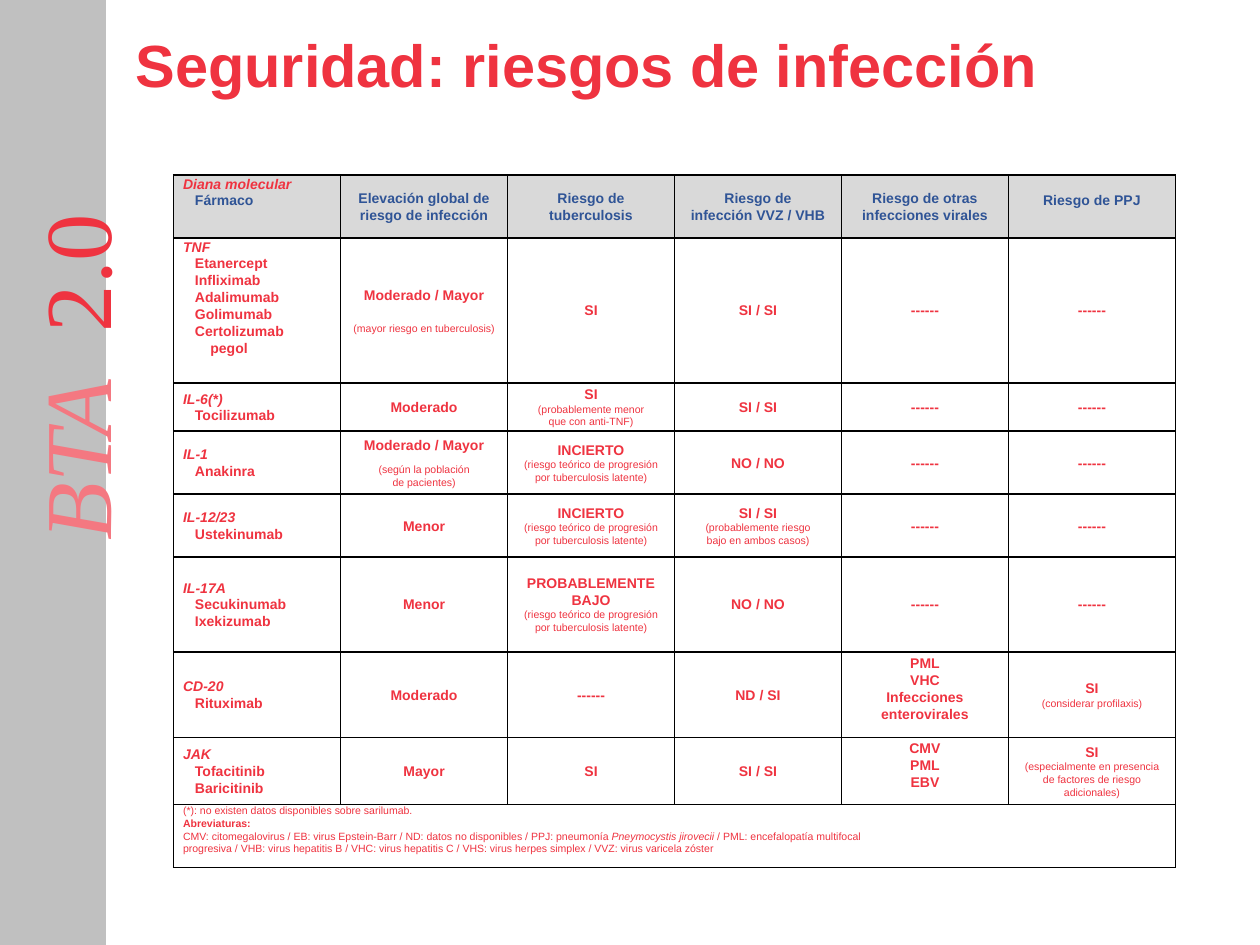
import pptx
import pptx.dml.color
import pptx.enum.shapes
import pptx.enum.text
import pptx.oxml
import pptx.oxml.ns
import pptx.util
from pptx.util import Cm

COLORS = {
    "red": "EF3340",
    "pink": "F47881",
    "blue": "2F5496",
    "sidebar": "C0C0C0",
    "header": "D9D9D9",
    "border": "000000",
}
ALIGN = pptx.enum.text.PP_ALIGN
ANCHOR = pptx.enum.text.MSO_ANCHOR
ROW_HEIGHTS = [1.27, 2.92, 0.97, 1.27, 1.27, 1.91, 1.73, 1.35, 1.27]
TAIL_MARGIN = 0.26
NONE = "------"
PROGRESSION = "(riesgo teórico de progresión\npor tuberculosis latente)"

HEADERS = [
    "Elevación global de\nriesgo de infección",
    "Riesgo de tuberculosis",
    "Riesgo de\ninfección VVZ / VHB",
    "Riesgo de otras\ninfecciones virales",
    "Riesgo de PPJ",
]
TARGETS = [
    ("TNF", ["Etanercept", "Infliximab", "Adalimumab", "Golimumab", "Certolizumab", "pegol"]),
    ("IL-6(*)", ["Tocilizumab"]),
    ("IL-1", ["Anakinra"]),
    ("IL-12/23", ["Ustekinumab"]),
    ("IL-17A", ["Secukinumab", "Ixekizumab"]),
    ("CD-20", ["Rituximab"]),
    ("JAK", ["Tofacitinib", "Baricitinib"]),
]
RISKS = [
    [("Moderado / Mayor", "(mayor riesgo en tuberculosis)", 11), ("SI",), ("SI / SI",), (NONE,), (NONE,)],
    [("Moderado",), ("SI", "(probablemente menor\nque con anti-TNF)"), ("SI / SI",), (NONE,), (NONE,)],
    [("Moderado / Mayor", "(según la población\nde pacientes)", 6), ("INCIERTO", PROGRESSION),
     ("NO / NO",), (NONE,), (NONE,)],
    [("Menor",), ("INCIERTO", PROGRESSION),
     ("SI / SI", "(probablemente riesgo\nbajo en ambos casos)"), (NONE,), (NONE,)],
    [("Menor",), ("PROBABLEMENTE BAJO", PROGRESSION), ("NO / NO",), (NONE,), (NONE,)],
    [("Moderado",), (NONE,), ("ND / SI",), ("PML\nVHC\nInfecciones\nenterovirales",),
     ("SI", "(considerar profilaxis)")],
    [("Mayor",), ("SI",), ("SI / SI",), ("CMV\nPML\nEBV",),
     ("SI", "(especialmente en presencia de factores de riesgo adicionales)")],
]
FOOTNOTES = [
    [("(*): no existen datos disponibles sobre sarilumab.", {})],
    [("Abreviaturas:", {"bold": True})],
    [("CMV: citomegalovirus / EB: virus Epstein-Barr / ND: datos no disponibles / PPJ: pneumonía ", {}),
     ("Pneymocystis jirovecii", {"italic": True}),
     (" / PML: encefalopatía multifocal", {})],
    [("progresiva / VHB: virus hepatitis B / VHC: virus hepatitis C / "
      "VHS: virus herpes simplex / VVZ: virus varicela zóster", {})],
]


def rgb(name):
    return pptx.dml.color.RGBColor.from_string(COLORS[name])


def format_run(run, size, color="red", bold=False, italic=False, name="Arial"):
    font = run.font
    font.size = pptx.util.Pt(size)
    font.name = name
    font.bold = bold
    font.italic = italic
    font.color.rgb = rgb(color)


def write_lines(cell, lines):
    frame = cell.text_frame
    frame.text = "\n".join(line["text"] for line in lines)
    for paragraph, line in zip(frame.paragraphs, lines):
        paragraph.alignment = line.get("align", ALIGN.CENTER)
        paragraph.line_spacing = 1.07
        if "gap" in line:
            paragraph.space_after = pptx.util.Pt(line["gap"])
        if "indent" in line:
            paragraph._p.get_or_add_pPr().set("marL", str(Cm(line["indent"])))
        format_run(paragraph.runs[0], line.get("size", 8), line.get("color", "red"),
                   line.get("bold", True), line.get("italic", False))


def style_cell(cell, fill=None, anchor=ANCHOR.MIDDLE):
    cell.margin_left = cell.margin_right = Cm(0.19)
    cell.margin_top = cell.margin_bottom = 0
    cell.vertical_anchor = anchor
    properties = cell._tc.get_or_add_tcPr()
    for side in ("lnL", "lnR", "lnT", "lnB"):
        properties.append(pptx.oxml.parse_xml(
            f'<a:{side} {pptx.oxml.ns.nsdecls("a")} w="{pptx.util.Pt(1)}"><a:solidFill>'
            f'<a:srgbClr val="{COLORS["border"]}"/></a:solidFill></a:{side}>'))
    if fill:
        cell.fill.solid()
        cell.fill.fore_color.rgb = rgb(fill)
    else:
        cell.fill.background()


def write_header(table):
    write_lines(table.cell(0, 0), [
        {"text": "Diana molecular", "align": ALIGN.JUSTIFY, "italic": True},
        {"text": "Fármaco", "align": ALIGN.JUSTIFY, "indent": 0.24, "color": "blue"},
    ])
    for column, header in enumerate(HEADERS, 1):
        write_lines(table.cell(0, column),
                    [{"text": text, "color": "blue"} for text in header.split("\n")])
    table.cell(0, 5).margin_bottom = Cm(TAIL_MARGIN)


def write_target(cell, target, drugs):
    lines = [{"text": target, "align": ALIGN.LEFT, "italic": True}]
    for drug in drugs:
        indent = 0.55 if drug == "pegol" else 0.24
        lines.append({"text": drug, "align": ALIGN.LEFT, "indent": indent})
    write_lines(cell, lines)


def write_risk(cell, level, note="", gap=0):
    lines = [{"text": text} for text in level.split("\n")]
    if len(lines) > 1:
        cell.margin_bottom = Cm(TAIL_MARGIN)
    if note:
        lines[-1]["gap"] = gap
        lines += [{"text": text, "size": 6, "bold": False} for text in note.split("\n")]
    write_lines(cell, lines)


def write_footnotes(cell):
    frame = cell.text_frame
    for index, parts in enumerate(FOOTNOTES):
        paragraph = frame.paragraphs[0] if index == 0 else frame.add_paragraph()
        paragraph.alignment = ALIGN.JUSTIFY
        paragraph.line_spacing = 1.07
        for text, style in parts:
            run = paragraph.add_run()
            run.text = text
            format_run(run, 6, **style)


def add_risk_table(slide, left, top, width):
    rows, columns = len(ROW_HEIGHTS), len(HEADERS) + 1
    shape = slide.shapes.add_table(rows, columns, Cm(left), Cm(top), Cm(width), Cm(sum(ROW_HEIGHTS)))
    table = shape.table
    table.first_row = table.horz_banding = False
    for column in table.columns:
        column.width = Cm(width / columns)
    for index, height in enumerate(ROW_HEIGHTS):
        table.rows[index].height = Cm(height)
        for column in range(columns):
            at_top = index == rows - 1 or (column == 0 and index < 2)
            style_cell(table.cell(index, column), "header" if index == 0 else None,
                       ANCHOR.TOP if at_top else ANCHOR.MIDDLE)
    write_header(table)
    for index, (target, risks) in enumerate(zip(TARGETS, RISKS), 1):
        write_target(table.cell(index, 0), *target)
        for column, risk in enumerate(risks, 1):
            write_risk(table.cell(index, column), *risk)
    table.cell(rows - 1, 0).merge(table.cell(rows - 1, columns - 1))
    write_footnotes(table.cell(rows - 1, 0))


def add_sidebar(slide, left, top, width, height):
    band = slide.shapes.add_shape(pptx.enum.shapes.MSO_SHAPE.RECTANGLE,
                                  Cm(left), Cm(top), Cm(width), Cm(height))
    band.shadow.inherit = False
    band.fill.solid()
    band.fill.fore_color.rgb = rgb("sidebar")
    band.line.color.rgb = rgb("sidebar")
    band.line.width = pptx.util.Pt(0.75)
    label = slide.shapes.add_textbox(Cm(left - 2.62), Cm(top + 5.77), Cm(8.2), Cm(2.54))
    label.rotation = 270
    label.text_frame.word_wrap = True
    paragraph = label.text_frame.paragraphs[0]
    for text, color, italic in (("BTA", "pink", True), (" ", "pink", True), ("2.0", "red", False)):
        run = paragraph.add_run()
        run.text = text
        format_run(run, 54, color, italic=italic, name="Times New Roman")
    paragraph.runs[1].font._element.set("spc", "1350")


def add_title(slide, left, top, width, height):
    title = slide.shapes.add_textbox(Cm(left), Cm(top), Cm(width), Cm(height))
    frame = title.text_frame
    frame.word_wrap = True
    frame.vertical_anchor = ANCHOR.MIDDLE
    frame.text = "Seguridad: riesgos de infección"
    format_run(frame.paragraphs[0].runs[0], 34, bold=True)


def main():
    presentation = pptx.Presentation()
    presentation.slide_width = Cm(25.4)
    presentation.slide_height = Cm(19.05)
    slide = presentation.slides.add_slide(presentation.slide_layouts[6])
    add_sidebar(slide, 0, 0, 2.12, 19.05)
    add_title(slide, 2.49, 0.38, 21.4, 1.8)
    add_risk_table(slide, 3.5, 3.53, 20.2)
    presentation.save("out.pptx")


if __name__ == "__main__":
    main()
